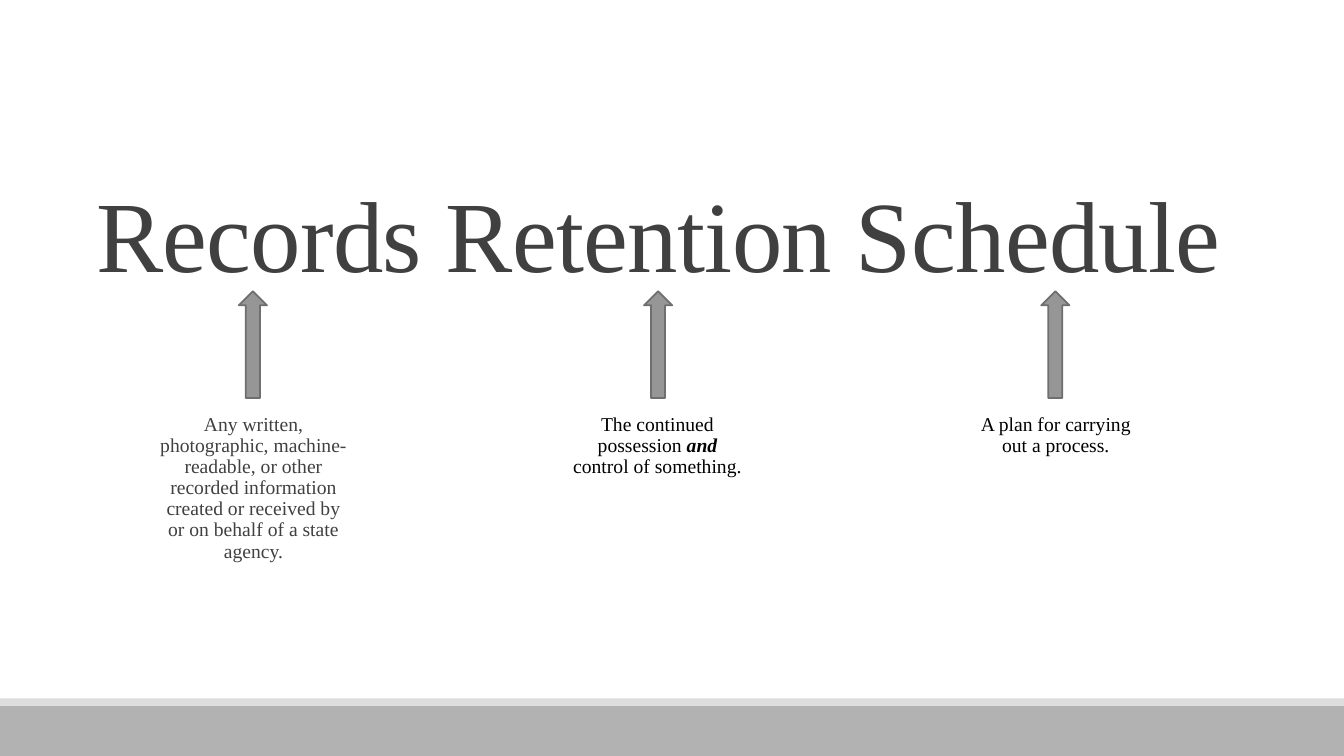
from dataclasses import dataclass

from pptx import Presentation
from pptx.dml.color import RGBColor
from pptx.enum.shapes import MSO_SHAPE
from pptx.enum.text import MSO_ANCHOR, MSO_AUTO_SIZE, PP_ALIGN
from pptx.util import Cm, Pt

RECT, ARROW = MSO_SHAPE.RECTANGLE, MSO_SHAPE.UP_ARROW
TOP, BOTTOM = MSO_ANCHOR.TOP, MSO_ANCHOR.BOTTOM
CENTER, FIXED = PP_ALIGN.CENTER, MSO_AUTO_SIZE.NONE
FONT = "Times New Roman"
WIDE, HIGH = 33.87, 19.05
DARK, BLACK = "404040", "000000"


@dataclass
class Term:
    left: float
    arrow: float
    words: list[str]  # every second piece is stressed
    color: str = BLACK
    inset: float = 0.25


@dataclass
class Band:
    top: float
    height: float
    color: str


TERMS = [
    Term(3.94, 6.02, ["Any written, photographic, machine-readable, or other recorded "
                      "information created or received by or on behalf of a state agency."],
         DARK, 0),
    Term(14.12, 16.23, ["The continued possession ", "and ", "control of something."]),
    Term(24.16, 26.24, ["A plan for carrying out a process."]),
]
BANDS = [Band(17.78, 1.27, "B2B2B2"), Band(17.6, 0.18, "DDDDDD")]


def paint(target, color: str) -> None:
    """Give a fill a solid colour."""
    target.solid()
    target.fore_color.rgb = RGBColor.from_string(color)


def write(shape, words: list[str], *, size: float, color: str, lead: float,
          inset: float = 0.25, anchor=TOP, track: int = 0) -> None:
    frame = shape.text_frame
    frame.word_wrap, frame.auto_size = True, FIXED
    frame.vertical_anchor = anchor
    frame.margin_left = frame.margin_right = Cm(inset)
    para = frame.paragraphs[0]
    para.alignment, para.line_spacing = CENTER, lead
    for i, piece in enumerate(words):
        run = para.add_run()
        run.text = piece
        font = run.font
        font.name, font.size = FONT, Pt(size)
        font.bold = font.italic = i % 2 == 1
        paint(font.fill, color)
        if track:
            run._r.get_or_add_rPr().set("spc", str(track))


def draw(slide, kind, left: float, top: float, width: float, height: float,
         fill: str, line: str = "") -> None:
    shape = slide.shapes.add_shape(kind, Cm(left), Cm(top), Cm(width), Cm(height))
    shape.shadow.inherit = False
    paint(shape.fill, fill)
    if line:
        paint(shape.line.fill, line)
        shape.line.width = Pt(1.25)
    else:
        shape.line.fill.background()


def main() -> None:
    deck = Presentation()
    deck.slide_width, deck.slide_height = Cm(WIDE), Cm(HIGH)
    slide = deck.slides.add_slide(deck.slide_layouts.get_by_name("Title Only"))

    # Footer bands
    for band in BANDS:
        draw(slide, RECT, 0, band.top, WIDE, band.height, band.color)

    # Title
    title = slide.shapes.title
    title.left, title.top = Cm(1.98), Cm(3.84)
    title.width, title.height = Cm(29.21), Cm(3.68)
    write(title, ["Records Retention Schedule"], size=72, color=DARK,
          lead=0.85, anchor=BOTTOM, track=-50)

    # Meaning of each word, with an arrow up to it
    for term in TERMS:
        note = slide.shapes.add_textbox(Cm(term.left), Cm(10.31), Cm(4.9), Cm(5.03))
        write(note, term.words, size=14, color=term.color, lead=0.9, inset=term.inset)
        draw(slide, ARROW, term.arrow, 7.34, 0.71, 2.69, "969696", "6F6F6F")

    deck.save("out.pptx")


if __name__ == "__main__":
    main()
